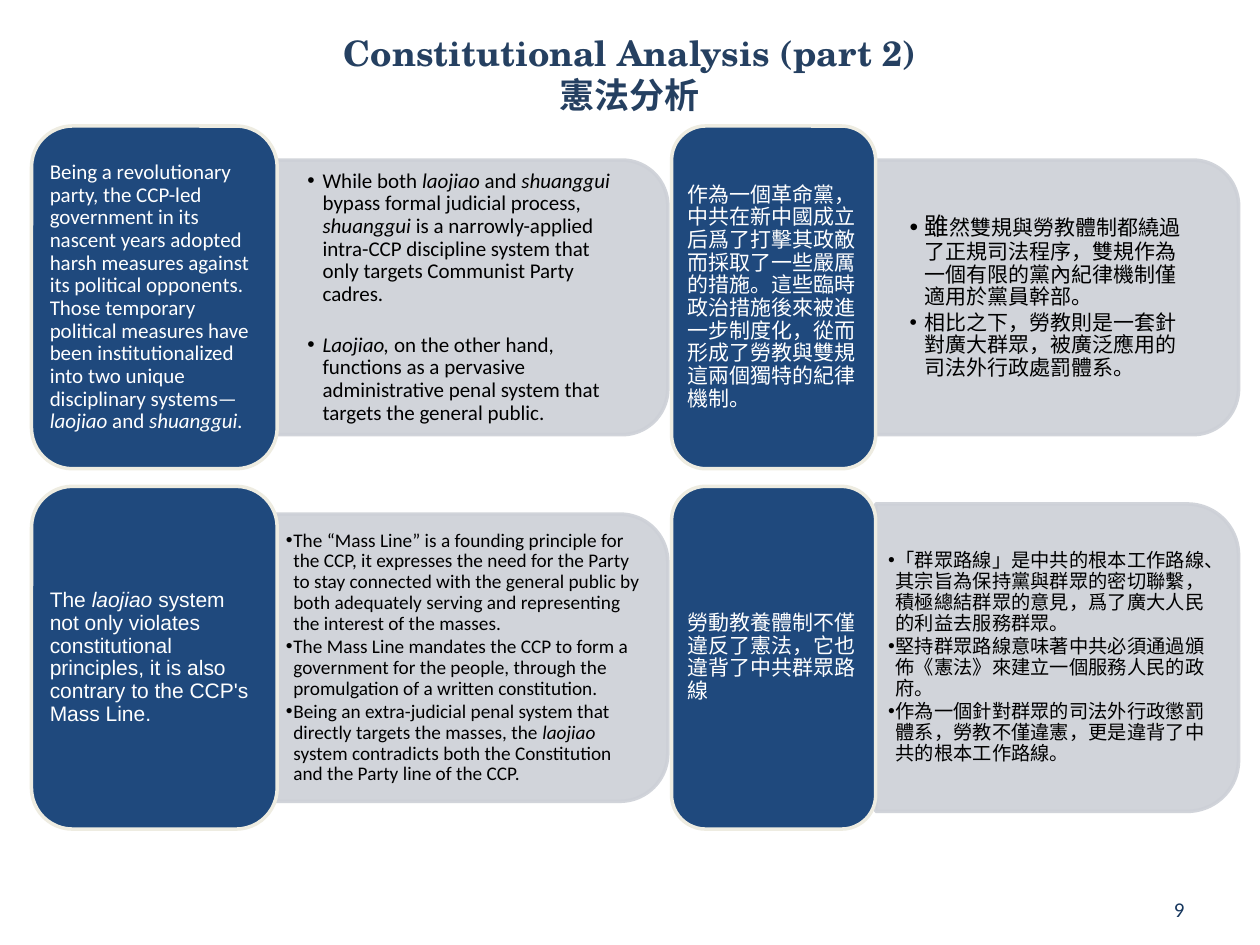
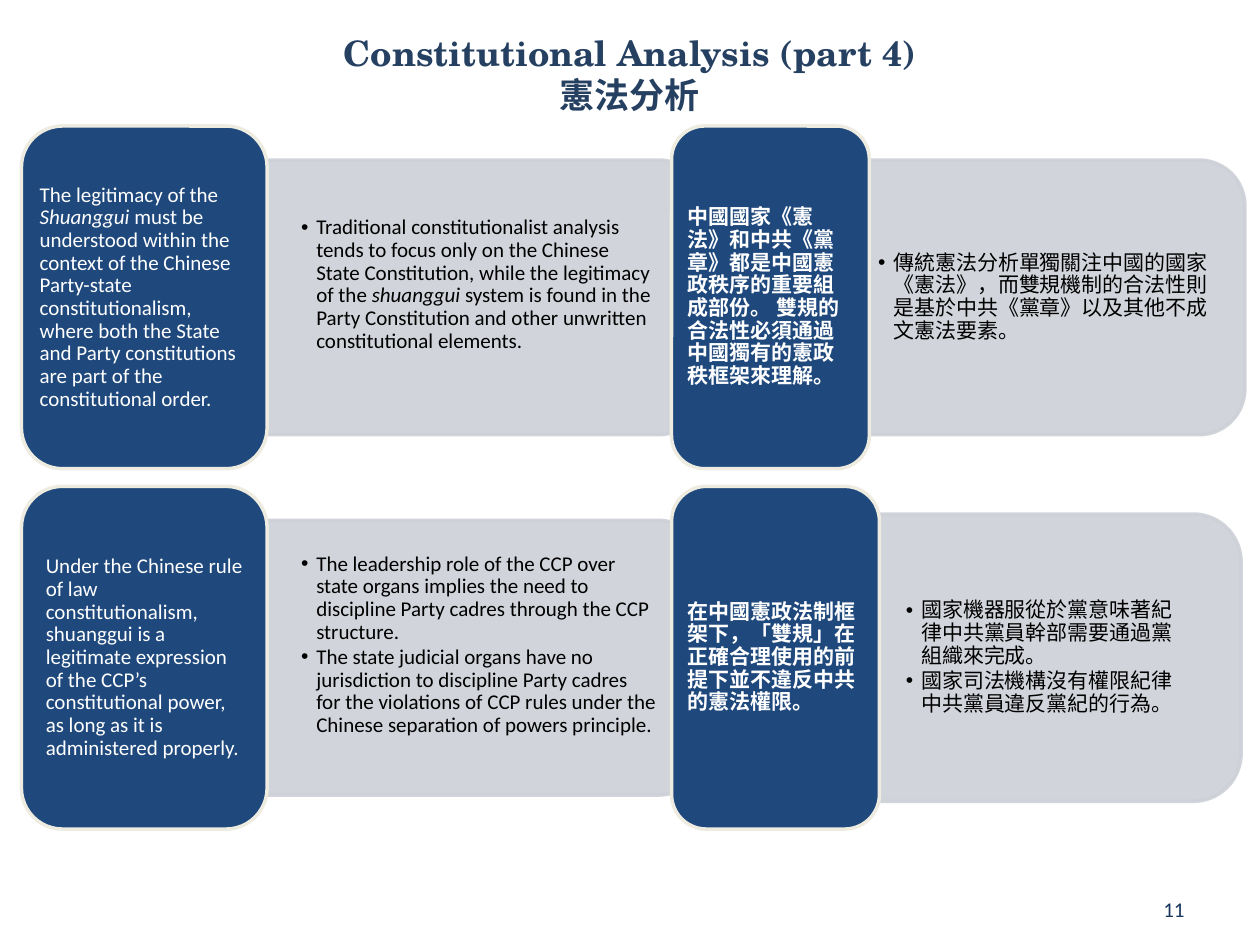
from dataclasses import dataclass

from lxml import etree
from pptx import Presentation
from pptx.dml.color import RGBColor
from pptx.enum.shapes import MSO_SHAPE
from pptx.enum.text import MSO_ANCHOR, MSO_AUTO_SIZE, PP_ALIGN
from pptx.oxml.ns import qn
from pptx.util import Inches, Pt

CARD_SHAPE = MSO_SHAPE.ROUNDED_RECTANGLE
PANEL_SHAPE = MSO_SHAPE.ROUND_2_SAME_RECTANGLE
MIDDLE = MSO_ANCHOR.MIDDLE
LEFT, CENTER, RIGHT = PP_ALIGN.LEFT, PP_ALIGN.CENTER, PP_ALIGN.RIGHT
NO_AUTOFIT = MSO_AUTO_SIZE.NONE
TITLE_ONLY = 5


@dataclass(frozen=True)
class Theme:
    title: str = "254061"
    card: str = "1F497D"
    card_line: str = "EEECE1"
    card_text: str = "FFFFFF"
    panel: str = "CDD0D7"
    panel_text: str = "000000"
    number: str = "17375E"
    title_font: str = "TeX Gyre Schola"
    latin_font: str = "Calibri"
    chinese_font: str = "Noto Sans CJK TC"
    title_size: int = 20
    lead_size: int = 14
    text_size: int = 12
    small_size: int = 11


THEME = Theme()
ROW_TOPS = (1, 3.86)
CARD_HEIGHT = 2.72
CORNER_INSET = 0.05  # part of the short side that a rounded corner takes from the text
CARD_INSETS = (0.05, 0.03, 0.05, 0.03)
WIDE_INSETS = (0.27, 0.14, 0.27, 0.14)
RAISED_INSETS = (0.27, 0.14, 0.27, 0.34)
TIGHT_INSETS = (0.1, 0.1, 0.1, 0.1)


class Deck:
    def __init__(self, theme):
        self.theme = theme
        self.prs = Presentation()
        self.prs.slide_width, self.prs.slide_height = Inches(10), Inches(7.5)
        self.s = None

    def new_slide(self, title, number):
        self.s = self.prs.slides.add_slide(self.prs.slide_layouts[TITLE_ONLY])
        t = self.theme
        sp = self.s.shapes.title
        sp.left, sp.top, sp.width, sp.height = map(Inches, (0.5, 0.12, 9, 0.92))
        look = dict(size=t.title_size, color=t.title, font=t.title_font,
                    east_font=t.chinese_font, bold=True)
        self.fill_text(sp.text_frame, [title], look, align=CENTER, spacing=1)
        sp = self.s.shapes.add_textbox(*map(Inches, (8.42, 7.08, 1.08, 0.27)))
        look = dict(size=t.text_size, color=t.number, font=t.latin_font)
        self.fill_text(sp.text_frame, [number], look, align=RIGHT, spacing=1)

    def fill_text(self, tf, texts, look, insets=(0.1, 0.05, 0.1, 0.05), align=LEFT,
                  spacing=0.9, indent=0, gap=0):
        """Fill a frame; *text* is italic, ^text^ is larger, gap parts the paragraphs."""
        sides = ("margin_left", "margin_top", "margin_right", "margin_bottom")
        values = dict(zip(sides, map(Inches, insets)), word_wrap=True,
                      auto_size=NO_AUTOFIT, vertical_anchor=MIDDLE)
        for name, value in values.items():
            setattr(tf, name, value)
        for n, text in enumerate(texts):
            p = tf.add_paragraph() if n else tf.paragraphs[0]
            p.alignment, p.line_spacing = align, spacing
            p.space_before = Pt(gap if n else 0)
            p.space_after = Pt(1.5 if n < len(texts) - 1 else 0)
            if indent:
                self.bullet(p, indent)
            for k, line in enumerate(text.split("\n")):
                if k:
                    p.add_line_break()
                self.runs(p, line, look)

    def bullet(self, p, indent):
        pPr = p._p.get_or_add_pPr()
        pPr.set("marL", str(Inches(indent)))
        pPr.set("indent", str(-Inches(indent)))
        etree.SubElement(pPr, qn("a:buFont")).set("typeface", "Arial")
        etree.SubElement(pPr, qn("a:buChar")).set("char", "•")

    def runs(self, p, text, look):
        for i, part in enumerate(text.split("*")):
            for j, piece in enumerate(part.split("^")):
                if not piece:
                    continue
                r = p.add_run()
                r.text = piece
                size = self.theme.lead_size if j % 2 else look["size"]
                values = dict(size=Pt(size), name=look["font"],
                              bold=look.get("bold", False), italic=bool(i % 2))
                for name, value in values.items():
                    setattr(r.font, name, value)
                r.font.color.rgb = RGBColor.from_string(look["color"])
                east = etree.SubElement(r._r.get_or_add_rPr(), qn("a:ea"))
                east.set("typeface", look.get("east_font", look["font"]))

    def shape(self, kind, box, fill, line, opacity=100):
        sp = self.s.shapes.add_shape(kind, *map(Inches, box))
        sp.shadow.inherit = False
        sp.line.width = Pt(2)
        for paint, color in ((sp.fill, fill), (sp.line.fill, line)):
            paint.solid()
            paint.fore_color.rgb = RGBColor.from_string(color)
        if opacity < 100:
            for clr in sp._element.spPr.iter(qn("a:srgbClr")):
                etree.SubElement(clr, qn("a:alpha")).set("val", str(opacity * 1000))
        return sp

    def card(self, left, top, width, text, font, bold=False, insets=CARD_INSETS):
        t = self.theme
        sp = self.shape(CARD_SHAPE, (left, top, width, CARD_HEIGHT), t.card, t.card_line)
        look = dict(size=t.text_size, color=t.card_text, font=font, bold=bold)
        self.fill_text(sp.text_frame, [text], look, insets)

    def panel(self, left, middle, width, height, texts, font, small=False,
              insets=WIDE_INSETS, gap=0):
        """Bulleted panel rounded on the right: a turned shape under upright text."""
        t = self.theme
        box = (left + (width - height) / 2, middle - width / 2, height, width)
        sp = self.shape(PANEL_SHAPE, box, t.panel, t.panel, opacity=90)
        sp.rotation = 90
        corner = height * CORNER_INSET
        box = (left, middle - height / 2 + corner, width - corner, height - 2 * corner)
        tb = self.s.shapes.add_textbox(*map(Inches, box))
        look = dict(size=t.small_size if small else t.text_size,
                    color=t.panel_text, font=font)
        self.fill_text(tb.text_frame, texts, look, insets, gap=gap,
                       indent=0.06 if small else 0.12)

    def column(self, left, font, rows):
        for top, (card, panel) in zip(ROW_TOPS, rows):
            self.panel(middle=top + CARD_HEIGHT / 2, **{"font": font, **panel})
            self.card(left=left, top=top, **{"font": font, **card})


SLIDES = [
    dict(
        title="Constitutional Analysis (part 2)\n憲法分析", number="9",
        english=(0.25, [
            (dict(width=1.95, text=(
                "Being a revolutionary party, the CCP-led government in its nascent years "
                "adopted harsh measures against its political opponents. Those temporary "
                "political measures have been institutionalized into two unique "
                "disciplinary systems—*laojiao* and *shuanggui.*")),
             dict(left=2.17, width=3.13, height=2.18, gap=14.5, texts=[
                 "While both *laojiao *and *shuanggui *bypass formal judicial process, "
                 "*shuanggui* is a narrowly-applied intra-CCP discipline system that only "
                 "targets Communist Party cadres.",
                 "*Laojiao, *on the other hand, functions as a pervasive administrative "
                 "penal system that targets the general public."])),
            (dict(width=1.95, font="Arial", text=(
                "The *laojiao* system not only violates constitutional principles, it is "
                "also contrary to the CCP's Mass Line.")),
             dict(left=2.17, width=3.13, height=2.28, small=True, insets=TIGHT_INSETS, texts=[
                 "The “Mass Line” is a founding principle for the CCP, it expresses the "
                 "need for the Party to stay connected with the general public by both "
                 "adequately serving and representing the interest of the masses.",
                 "The Mass Line mandates the CCP to form a government for the people, "
                 "through the promulgation of a written constitution.",
                 "Being an extra-judicial penal system that directly targets the masses, "
                 "the *laojiao* system contradicts both the Constitution and the Party "
                 "line of the CCP."])),
        ]),
        chinese=(5.33, [
            (dict(width=1.62, text=(
                "作為一個革命黨，中共在新中國成立后爲了打擊其政敵而採取了一些嚴厲的措施。"
                "這些臨時政治措施後來被進一步制度化，從而形成了勞教與雙規這兩個獨特的紀律機制。")),
             dict(left=6.95, width=2.88, height=2.18, texts=[
                 "^雖^然雙規與勞教體制都繞過了正規司法程序，雙規作為一個有限的黨內紀律機制"
                 "僅適用於黨員幹部。",
                 "相比之下，勞教則是一套針對廣大群眾，被廣泛應用的司法外行政處罰體系。"])),
            (dict(width=1.62, text="勞動教養體制不僅違反了憲法，它也違背了中共群眾路線"),
             dict(left=6.95, width=2.88, height=2.44, small=True, insets=TIGHT_INSETS, texts=[
                 "「群眾路線」是中共的根本工作路線、其宗旨為保持黨與群眾的密切聯繫，"
                 "積極總結群眾的意見，爲了廣大人民的利益去服務群眾。",
                 "堅持群眾路線意味著中共必須通過頒佈《憲法》來建立一個服務人民的政府。",
                 "作為一個針對群眾的司法外行政懲罰體系，勞教不僅違憲，更是違背了中共的"
                 "根本工作路線。"])),
        ])),
    dict(
        title="Constitutional Analysis (part 4)\n憲法分析", number="11",
        english=(0.17, [
            (dict(width=1.95, text=(
                "The legitimacy of the *Shuanggui *must be understood within the context "
                "of the Chinese Party-state constitutionalism, where both the State and "
                "Party constitutions are part of the constitutional order.")),
             dict(left=2.12, width=3.47, height=2.18, insets=RAISED_INSETS, texts=[
                 "Traditional constitutionalist analysis tends to focus only on the "
                 "Chinese State Constitution, while the legitimacy of the *shuanggui* "
                 "system is found in the Party Constitution and other unwritten "
                 "constitutional elements."])),
            (dict(width=1.95, insets=TIGHT_INSETS, text=(
                "Under the Chinese rule of law constitutionalism, shuanggui is a "
                "legitimate expression of the CCP’s constitutional power, as long as it "
                "is administered properly.")),
             dict(left=2.12, width=3.47, height=2.18, insets=RAISED_INSETS, texts=[
                 "The leadership role of the CCP over state organs implies the need to "
                 "discipline Party cadres through the CCP structure.",
                 "The state judicial organs have no jurisdiction to discipline Party "
                 "cadres for the violations of CCP rules under the Chinese separation of "
                 "powers principle."])),
        ]),
        chinese=(5.33, [
            (dict(width=1.57, bold=True, text=(
                "中國國家《憲法》和中共《黨章》都是中國憲政秩序的重要組成部份。 "
                "雙規的合法性必須通過中國獨有的憲政秩框架來理解。")),
             dict(left=6.87, width=3.01, height=2.18, insets=TIGHT_INSETS, texts=[
                 "傳統憲法分析單獨關注中國的國家《憲法》，而雙規機制的合法性則是基於中共"
                 "《黨章》以及其他不成文憲法要素。"])),
            (dict(width=1.65, bold=True, text=(
                "在中國憲政法制框架下，「雙規」在正確合理使用的前提下並不違反中共的憲法權限。")),
             dict(left=6.92, width=2.93, height=2.28, texts=[
                 "國家機器服從於黨意味著紀律中共黨員幹部需要通過黨組織來完成。",
                 "國家司法機構沒有權限紀律中共黨員違反黨紀的行為。"])),
        ])),
]


def main():
    deck = Deck(THEME)
    for slide in SLIDES:
        deck.new_slide(slide["title"], slide["number"])
        for language, font in (("english", THEME.latin_font), ("chinese", THEME.chinese_font)):
            left, rows = slide[language]
            deck.column(left, font, rows)
    deck.prs.save("out.pptx")


if __name__ == "__main__":
    main()
